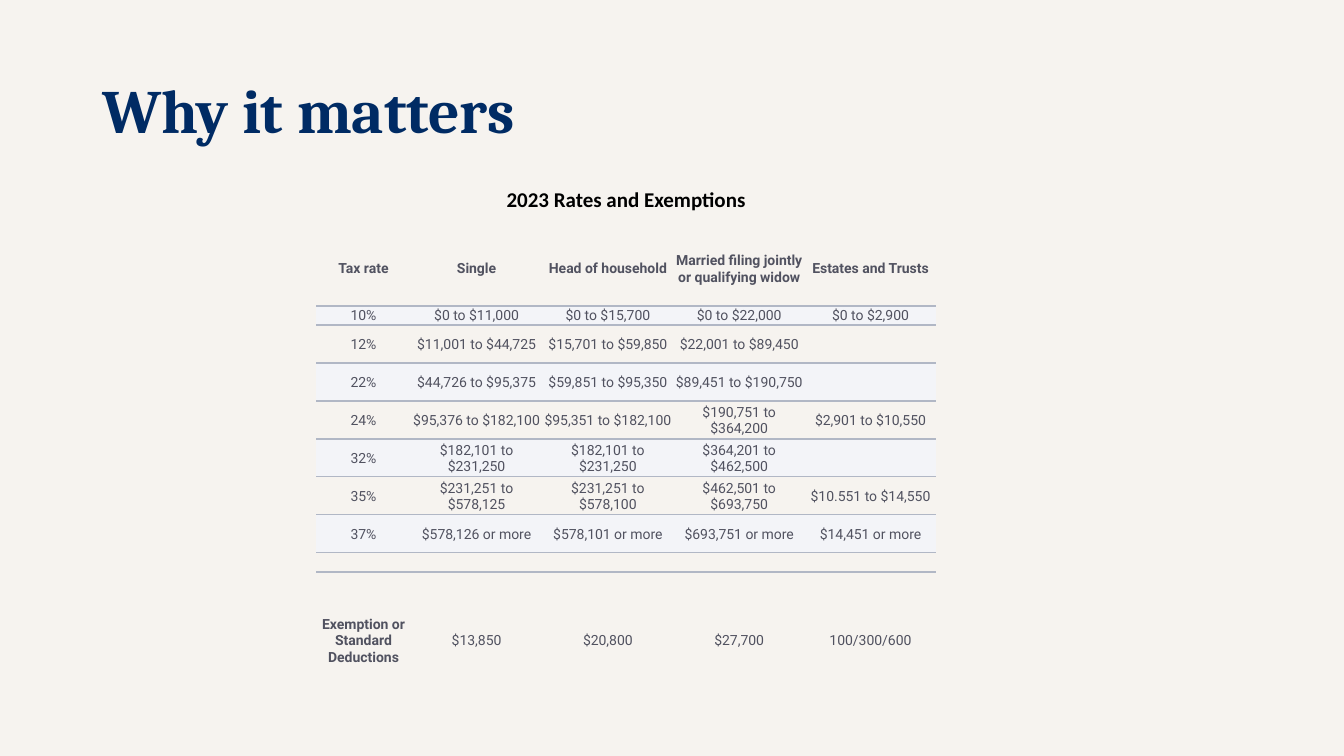
"""Build the "Why it matters" slide with the 2023 tax rate table."""
from lxml.etree import SubElement
from pptx import Presentation
from pptx.dml.color import RGBColor
from pptx.enum.text import MSO_ANCHOR, PP_ALIGN
from pptx.oxml.ns import qn
from pptx.util import Pt

TITLE = "Why it matters"
CAPTION = "2023 Rates and Exemptions"
HEADERS = ["Tax rate", "Single", "Head of household",
           "Married filing jointly or qualifying widow", "Estates and Trusts"]
RATES = [
    ["10%", "$0 to $11,000", "$0 to $15,700", "$0 to $22,000", "$0 to $2,900"],
    ["12%", "$11,001 to $44,725", "$15,701 to $59,850", "$22,001 to $89,450", ""],
    ["22%", "$44,726 to $95,375", "$59,851 to $95,350", "$89,451 to $190,750", ""],
    ["24%", "$95,376 to $182,100", "$95,351 to $182,100", "$190,751 to $364,200",
     "$2,901 to $10,550"],
    ["32%", "$182,101 to $231,250", "$182,101 to $231,250", "$364,201 to $462,500", ""],
    ["35%", "$231,251 to $578,125", "$231,251 to $578,100", "$462,501 to $693,750",
     "$10.551 to $14,550"],
    ["37%", "$578,126 or more", "$578,101 or more", "$693,751 or more", "$14,451 or more"],
]
DEDUCTIONS = ["Exemption or Standard Deductions", "$13,850", "$20,800", "$27,700",
              "100/300/600"]
EMPTY = [""] * 5
ROWS = [[CAPTION] + [""] * 4, EMPTY, HEADERS, *RATES, EMPTY, EMPTY, EMPTY, DEDUCTIONS]

HEADER_ROW = 2
FIRST_RATE = 3
LAST_RATE = FIRST_RATE + len(RATES) - 1
LAST_ROW = len(ROWS) - 1
COL_WIDTHS = [67.7] + [93.8] * 4
ROW_HEIGHTS = [19.1, 13, 53.3, 13.6] + [27.15] * 6 + [13.7, 11.2, 11.2, 53.3]
TABLE_LEFT, TABLE_TOP = 225.8, 133.2
NO_STYLE = "{2D5ABB26-0587-4C30-8999-92F81FD0307C}"

CREAM = RGBColor(0xF6, 0xF3, 0xEF)
NAVY = RGBColor(0x00, 0x2B, 0x64)
BLACK = RGBColor(0x00, 0x00, 0x00)
GREY = RGBColor(0x51, 0x52, 0x60)
BAND = RGBColor(0xF3, 0xF4, 0xF8)
RULE = RGBColor(0xB1, 0xB7, 0xC5)


def style(p, name, size, color, bold):
    p.font.name = name
    p.font.size = Pt(size)
    p.font.color.rgb = color
    p.font.bold = bold


def add_border(cell, side):
    ln = SubElement(cell._tc.get_or_add_tcPr(), qn(f"a:{side}"), w=str(Pt(1)))
    fill = SubElement(ln, qn("a:solidFill"))
    SubElement(fill, qn("a:srgbClr"), val=str(RULE))


def fill_cell(cell, text, row, col):
    cell.margin_left = cell.margin_right = cell.margin_top = Pt(0.7)
    cell.margin_bottom = Pt(0)
    cell.vertical_anchor = MSO_ANCHOR.MIDDLE if row else MSO_ANCHOR.BOTTOM
    if FIRST_RATE <= row <= LAST_RATE + 1:
        add_border(cell, "lnT")
    if HEADER_ROW <= row <= LAST_RATE:
        add_border(cell, "lnB")
    if FIRST_RATE <= row <= LAST_RATE and (row - FIRST_RATE) % 2 == 0:
        cell.fill.solid()
        cell.fill.fore_color.rgb = BAND
    else:
        cell.fill.background()
    p = cell.text_frame.paragraphs[0]
    p.alignment = PP_ALIGN.CENTER
    if not text:
        p.font.size = Pt(8)
        SubElement(p._p, qn("a:endParaRPr"), sz="800")
        return
    p.add_run().text = text
    if row == 0:
        style(p, "Calibri", 15, BLACK, True)
    else:
        bold = row == HEADER_ROW or (row == LAST_ROW and col == 0)
        style(p, "Roboto", 10, GREY, bold)


def add_title(s):
    tf = s.shapes.add_textbox(Pt(66), Pt(28.8), Pt(828), Pt(104.4)).text_frame
    tf.word_wrap = True
    tf.vertical_anchor = MSO_ANCHOR.MIDDLE
    p = tf.paragraphs[0]
    p.text = TITLE
    p.line_spacing = 0.9
    style(p, "Cambria", 44, NAVY, True)


def add_rates(s):
    table = s.shapes.add_table(len(ROWS), len(COL_WIDTHS), Pt(TABLE_LEFT), Pt(TABLE_TOP),
                               Pt(sum(COL_WIDTHS)), Pt(sum(ROW_HEIGHTS))).table
    table.first_row = table.horz_banding = False
    table._tbl.tblPr.find(qn("a:tableStyleId")).text = NO_STYLE
    for column, width in zip(table.columns, COL_WIDTHS):
        column.width = Pt(width)
    for row, height in zip(table.rows, ROW_HEIGHTS):
        row.height = Pt(height)
    for r, texts in enumerate(ROWS):
        for c, text in enumerate(texts):
            fill_cell(table.cell(r, c), text, r, c)
    table.cell(0, 0).merge(table.cell(0, len(COL_WIDTHS) - 1))


def main():
    prs = Presentation()
    prs.slide_width, prs.slide_height = Pt(960), Pt(540)
    s = prs.slides.add_slide(prs.slide_layouts[6])
    s.background.fill.solid()
    s.background.fill.fore_color.rgb = CREAM
    add_title(s)
    add_rates(s)
    prs.save("out.pptx")


if __name__ == "__main__":
    main()
